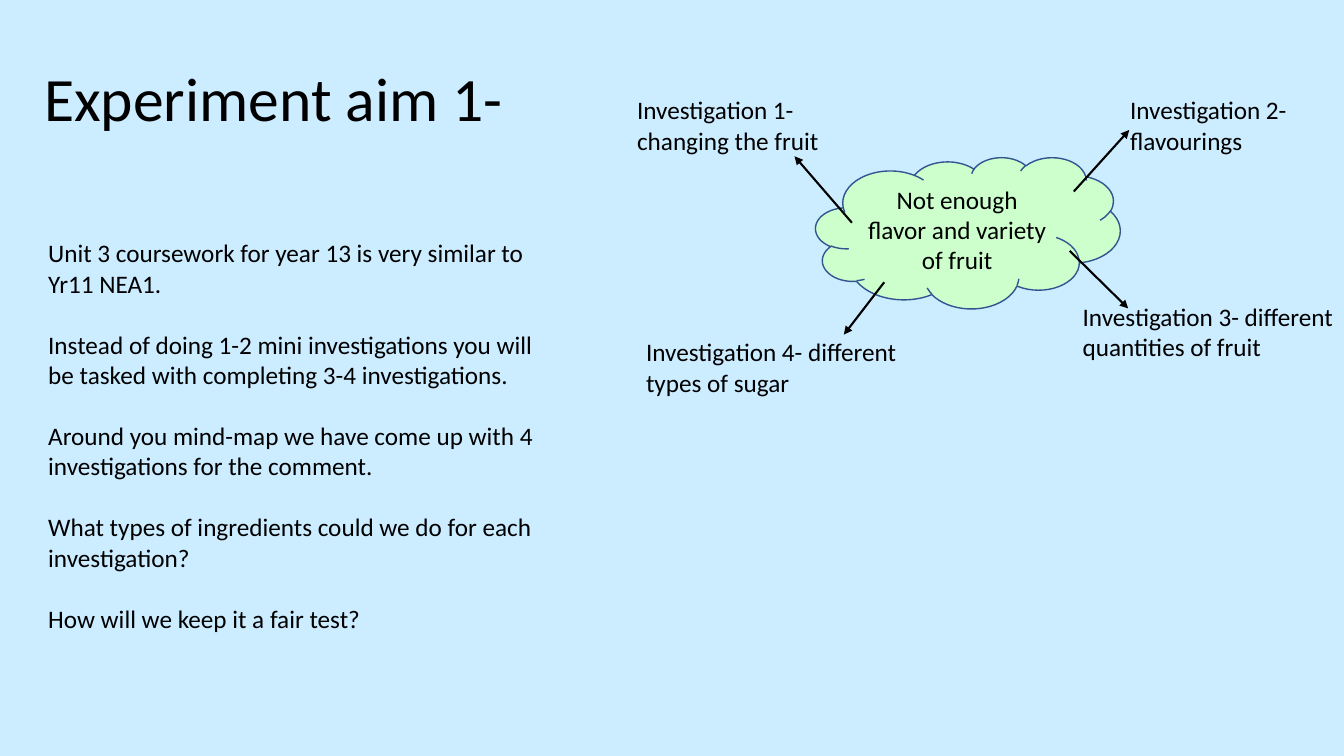
from dataclasses import dataclass

from lxml import etree
from pptx import Presentation
from pptx.dml.color import RGBColor
from pptx.enum.shapes import MSO_CONNECTOR, MSO_SHAPE
from pptx.enum.text import MSO_ANCHOR, PP_ALIGN
from pptx.oxml.ns import qn
from pptx.shapes.autoshape import Shape
from pptx.slide import Slide
from pptx.util import Inches, Pt

CLOUD = MSO_SHAPE.CLOUD
LINE = MSO_CONNECTOR.STRAIGHT
MIDDLE, TOP = MSO_ANCHOR.MIDDLE, MSO_ANCHOR.TOP
LEFT, CENTER = PP_ALIGN.LEFT, PP_ALIGN.CENTER


@dataclass(frozen=True)
class Theme:
    back: RGBColor = RGBColor(0xCC, 0xEC, 0xFF)
    cloud: RGBColor = RGBColor(0xCC, 0xFF, 0xCC)
    edge: RGBColor = RGBColor(0x32, 0x54, 0x91)
    ink: RGBColor = RGBColor(0, 0, 0)
    font: str = "Calibri"
    title: int = 44
    body: int = 18
    gap: int = 22  # one body line between paragraphs


@dataclass(frozen=True)
class Box:
    left: float
    top: float
    width: float
    height: float

    def lengths(self) -> list[int]:
        return [Inches(v) for v in (self.left, self.top, self.width, self.height)]


@dataclass(frozen=True)
class Branch:
    text: str
    box: Box
    start: tuple[float, float]
    end: tuple[float, float]


THEME = Theme()
NOTES = [
    "Unit 3 coursework for year 13 is very similar to Yr11 NEA1.",
    "Instead of doing 1-2 mini investigations you will be tasked with completing 3-4 investigations.",
    "Around you mind-map we have come up with 4 investigations for the comment.",
    "What types of ingredients could we do for each investigation?",
    "How will we keep it a fair test?",
]
BRANCHES = [
    Branch("Investigation 1- changing the fruit", Box(6.22, 0.89, 2.35, 0.71), (8.45, 2.21), (7.88, 1.55)),
    Branch("Investigation 2- flavourings", Box(11.11, 0.89, 2.35, 0.71), (10.65, 1.9), (11.2, 1.29)),
    Branch("Investigation 3- different quantities of fruit", Box(10.64, 2.94, 2.74, 0.71), (10.61, 2.49), (11.19, 3.06)),
    Branch("Investigation 4- different types of sugar", Box(6.31, 3.29, 2.74, 0.71), (8.77, 2.8), (8.37, 3.32)),
]


def write(shape: Shape, texts: list[str], size: int = THEME.body,
          anchor: MSO_ANCHOR = TOP, **style: object) -> None:
    frame = shape.text_frame
    for key, value in {"word_wrap": True, "vertical_anchor": anchor}.items():
        setattr(frame, key, value)
    look = {"alignment": LEFT, "space_after": Pt(0)} | style
    for i, text in enumerate(texts):
        para = frame.paragraphs[0] if i == 0 else frame.add_paragraph()
        for key, value in look.items():
            setattr(para, key, value)
        run = para.add_run()
        run.text = text
        for key, value in {"name": THEME.font, "size": Pt(size)}.items():
            setattr(run.font, key, value)
        run.font.color.rgb = THEME.ink


def add_text(slide: Slide, box: Box, texts: list[str], **style: object) -> None:
    write(slide.shapes.add_textbox(*box.lengths()), texts, **style)


def add_cloud(slide: Slide, box: Box, text: str) -> None:
    cloud = slide.shapes.add_shape(CLOUD, *box.lengths())
    cloud.shadow.inherit = False
    cloud.fill.solid()
    cloud.fill.fore_color.rgb = THEME.cloud
    cloud.line.color.rgb = THEME.edge
    cloud.line.width = Pt(1)
    write(cloud, [text], anchor=MIDDLE, alignment=CENTER)


def add_arrow(slide: Slide, start: tuple[float, float], end: tuple[float, float]) -> None:
    arrow = slide.shapes.add_connector(LINE, *[Inches(v) for v in start + end])
    arrow.line.color.rgb = THEME.ink
    arrow.line.width = Pt(1.5)
    # Arrowhead, and no shadow
    props = arrow.line._get_or_add_ln()
    etree.SubElement(props, qn("a:tailEnd"), type="triangle")
    etree.SubElement(arrow._element.spPr, qn("a:effectLst"))


def main() -> None:
    deck = Presentation()
    deck.slide_width, deck.slide_height = Inches(13.33), Inches(7.5)
    slide = deck.slides.add_slide(deck.slide_layouts[6])
    slide.background.fill.solid()
    slide.background.fill.fore_color.rgb = THEME.back

    # Mind map
    add_cloud(slide, Box(8.09, 1.56, 3.02, 1.5), "Not enough flavor and variety of fruit")
    for branch in BRANCHES:
        add_arrow(slide, branch.start, branch.end)
        add_text(slide, branch.box, [branch.text])

    # Title and notes
    add_text(slide, Box(0.34, 0.28, 11.5, 1.45), ["Experiment aim 1-"],
             size=THEME.title, anchor=MIDDLE, line_spacing=0.9)
    add_text(slide, Box(0.38, 2.31, 5.13, 4.04), NOTES, space_after=Pt(THEME.gap))

    deck.save("out.pptx")


if __name__ == "__main__":
    main()
